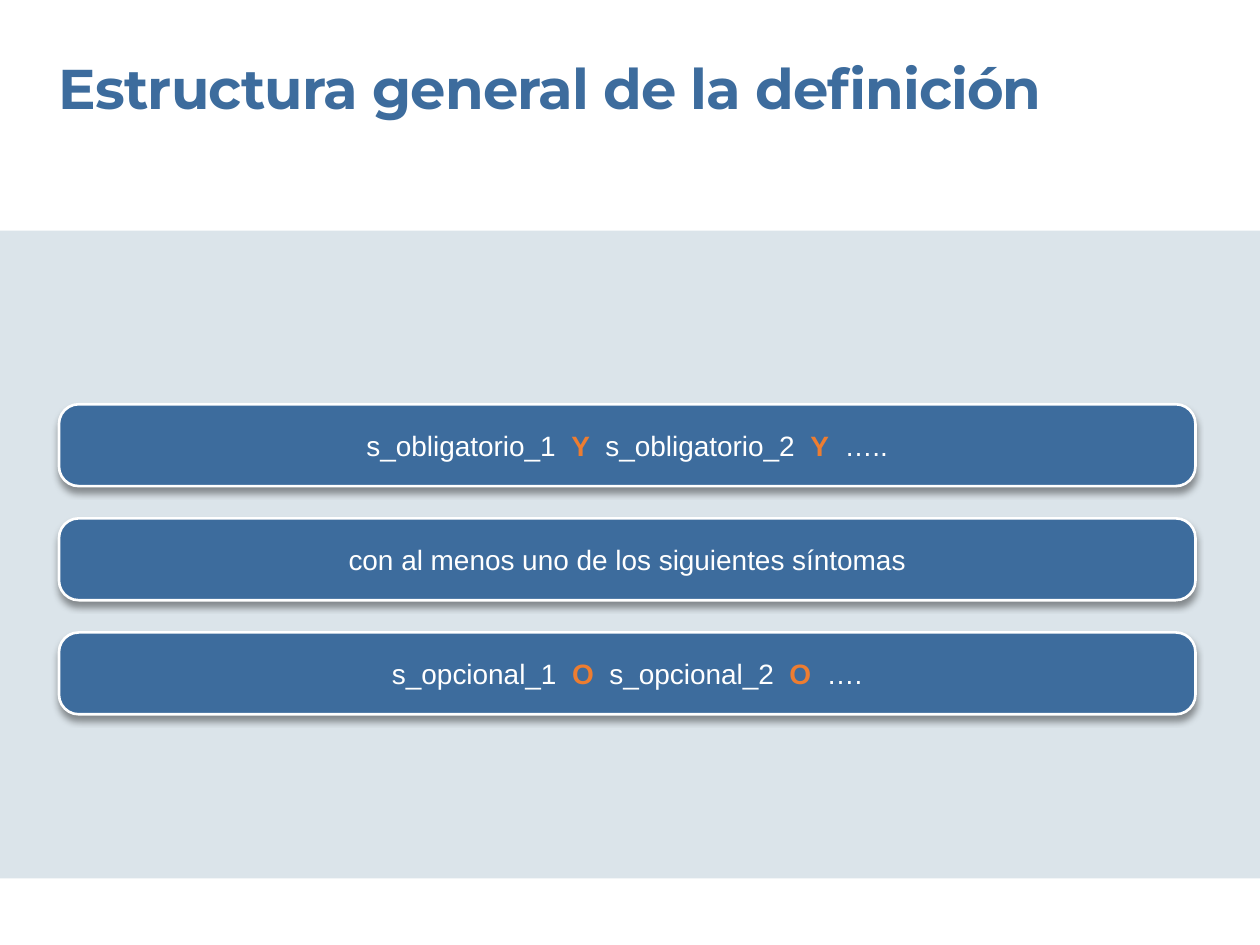
from lxml.etree import SubElement
from pptx import Presentation
from pptx.dml.color import RGBColor
from pptx.enum.shapes import MSO_SHAPE as Shape
from pptx.enum.text import MSO_ANCHOR as Anchor, PP_ALIGN as Align
from pptx.oxml.ns import qn
from pptx.util import Cm, Pt

BLUE, PALE, ORANGE, WHITE = "3D6C9D", "DBE4EA", "ED7D31", "FFFFFF"
LEFT = 1.19
BAR_TOP, BAR_PITCH = 8.15, 2.3
OPERATORS = ("Y", "O")
BARS = [
    ["s_obligatorio_1  ", "Y", "  s_obligatorio_2  ", "Y", "  ….."],
    ["con al menos uno de los siguientes síntomas"],
    ["s_opcional_1  ", "O", "  s_opcional_2  ", "O", "  …."],
]


def rgb(color):
    return RGBColor.from_string(color)


def add_run(p, text, *, font="Arial", size=16, color=WHITE, bold=False, spacing=None):
    r = p.add_run()
    r.text = text
    r.font.name = font
    r.font.size = Pt(size)
    r.font.bold = bold
    r.font.color.rgb = rgb(color)
    if spacing is not None:
        r.font._element.set("spc", str(round(spacing * 100)))


def add_block(s, kind, left, top, width, height, fill):
    sp = s.shapes.add_shape(kind, Cm(left), Cm(top), Cm(width), Cm(height))
    sp.shadow.inherit = False
    sp.fill.solid()
    sp.fill.fore_color.rgb = rgb(fill)
    sp.line.fill.background()
    return sp


def add_shadow(sp, color="000000", opacity=40, blur=4, distance=3, angle=90):
    effects = sp._element.spPr.find(qn("a:effectLst"))
    shadow = SubElement(
        effects, qn("a:outerShdw"), blurRad=str(Pt(blur)), dist=str(Pt(distance)),
        dir=str(angle * 60000), algn="t", rotWithShape="0")
    tint = SubElement(shadow, qn("a:srgbClr"), val=color)
    SubElement(tint, qn("a:alpha"), val=str(opacity * 1000))


def add_title(s, text):
    tf = s.shapes.add_textbox(Cm(LEFT), Cm(1.07), Cm(20.57), Cm(2.74)).text_frame
    tf.word_wrap = True
    tf.margin_left = tf.margin_top = tf.margin_right = tf.margin_bottom = 0
    add_run(tf.paragraphs[0], text, font="Montserrat", size=32, color=BLUE,
            bold=True, spacing=-0.5)


def add_bar(s, top, parts):
    sp = add_block(s, Shape.ROUNDED_RECTANGLE, LEFT, top, 22.91, 1.65, BLUE)
    sp.adjustments[0] = 0.24
    sp.line.color.rgb = rgb(WHITE)
    sp.line.width = Pt(1.5)
    add_shadow(sp)
    tf = sp.text_frame
    tf.word_wrap = True
    tf.vertical_anchor = Anchor.MIDDLE
    p = tf.paragraphs[0]
    p.alignment = Align.CENTER
    for part in parts:
        operator = part in OPERATORS
        add_run(p, part, color=ORANGE if operator else WHITE, bold=operator)


def main():
    prs = Presentation()
    prs.slide_width, prs.slide_height = Cm(25.4), Cm(19.05)
    s = prs.slides.add_slide(prs.slide_layouts[6])
    add_block(s, Shape.RECTANGLE, 0, 4.65, 25.4, 13.06, PALE)
    add_title(s, "Estructura general de la definición")
    for i, parts in enumerate(BARS):
        add_bar(s, BAR_TOP + i * BAR_PITCH, parts)
    prs.save("out.pptx")


if __name__ == "__main__":
    main()
